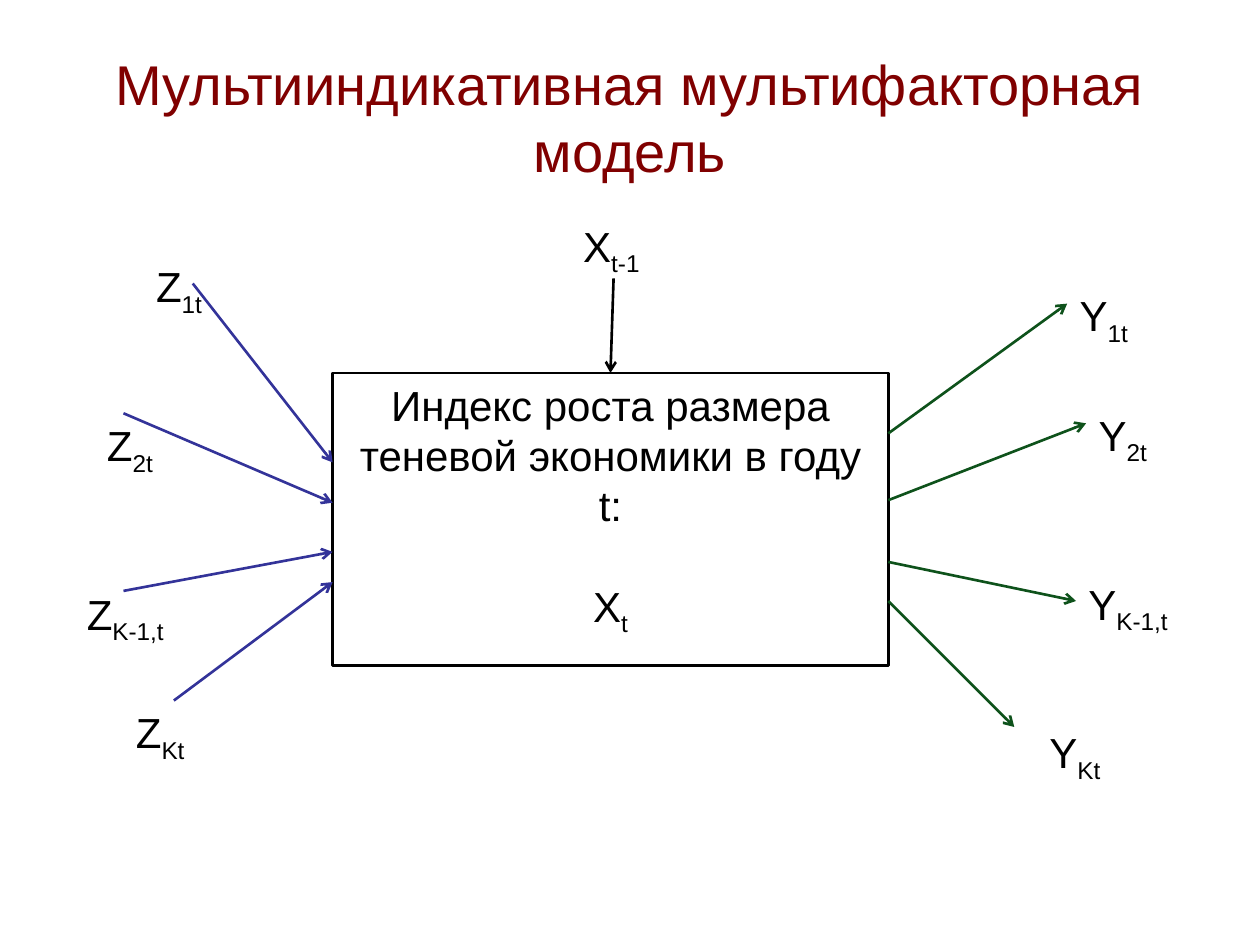
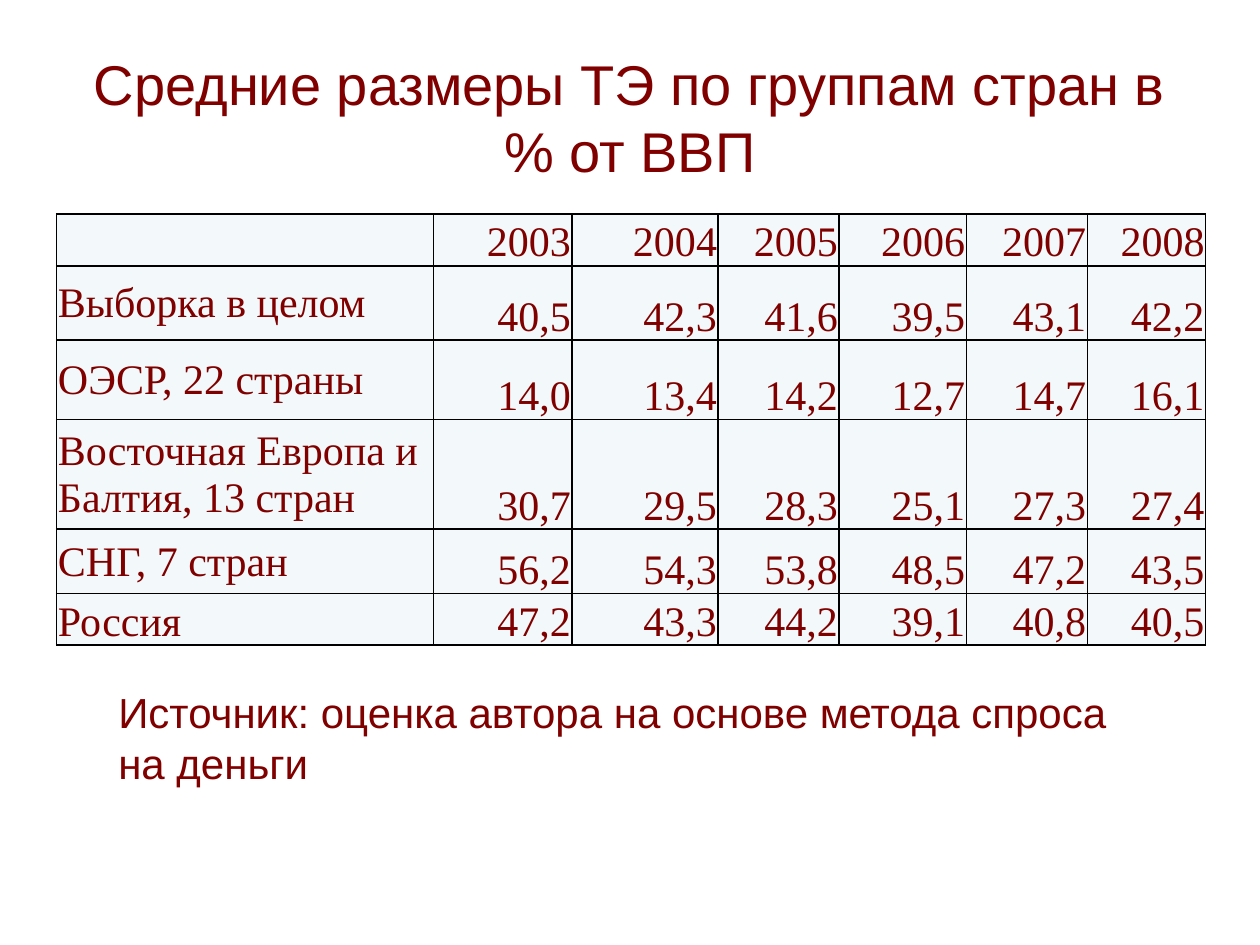
from lxml.etree import SubElement
from pptx import Presentation
from pptx.dml.color import RGBColor
from pptx.enum.shapes import MSO_CONNECTOR as CONN, MSO_SHAPE as SHAPE
from pptx.enum.text import MSO_ANCHOR as ANCHOR, MSO_AUTO_SIZE as AUTO, PP_ALIGN as ALIGN
from pptx.oxml.ns import qn
from pptx.util import Inches, Pt

COLORS = {"title": "800000", "text": "000000", "factor": "333399",
          "indicator": "0E521B", "cell": "F3F9FA"}
SANS, SERIF = "Arial", "Times New Roman"


def rgb(name):
    return RGBColor.from_string(COLORS[name])


def inches(*values):
    return [Inches(v) for v in values]


def set_attrs(obj, values):
    for name, value in values.items():
        setattr(obj, name, value)


class Deck:
    """Holds the presentation style and the current slide."""

    def __init__(self):
        self.prs = Presentation()
        set_attrs(self.prs, {"slide_width": Inches(10), "slide_height": Inches(7.5)})

    def add_runs(self, p, text, color="text", size=24, font=SANS, align=ALIGN.LEFT, sub=""):
        p.alignment = align
        for part in filter(None, (text, sub)):
            r = p.add_run()
            r.text = part
            set_attrs(r.font, {"size": Pt(size), "name": font})
            r.font.color.rgb = rgb(color)
        if sub:
            r.font._element.set("baseline", "-25000")

    def slide(self, title):
        self.s = self.prs.slides.add_slide(self.prs.slide_layouts[5])
        sp = self.s.shapes.title
        set_attrs(sp, dict(zip(("left", "top", "width", "height"), inches(0.5, 0.3, 9, 1.25))))
        tf = sp.text_frame
        set_attrs(tf, {"word_wrap": True, "auto_size": AUTO.NONE,
                       "vertical_anchor": ANCHOR.MIDDLE})
        self.add_runs(tf.paragraphs[0], title, "title", 32, align=ALIGN.CENTER)

    def text(self, box, text, color="text", sub="", wrap=False):
        tf = self.s.shapes.add_textbox(*inches(*box)).text_frame
        set_attrs(tf, {"word_wrap": wrap, "auto_size": AUTO.SHAPE_TO_FIT_TEXT})
        self.add_runs(tf.paragraphs[0], text, color, sub=sub)

    def index_box(self, box, caption, symbol, sub):
        sp = self.s.shapes.add_shape(SHAPE.RECTANGLE, *inches(*box))
        sp.shadow.inherit = False
        sp.fill.background()
        sp.line.color.rgb = rgb("text")
        sp.line.width = Pt(1.5)
        tf = sp.text_frame
        set_attrs(tf, {"word_wrap": True, "vertical_anchor": ANCHOR.TOP})
        self.add_runs(tf.paragraphs[0], caption, align=ALIGN.CENTER)
        p = tf.add_paragraph()
        p.space_before = Pt(28.5)
        self.add_runs(p, symbol, align=ALIGN.CENTER, sub=sub)
        return sp

    def arrow(self, start, end, color):
        c = self.s.shapes.add_connector(CONN.STRAIGHT, *inches(*start, *end))
        c.line.color.rgb = rgb(color)
        c.line.width = Pt(1.5)
        sp_pr = c._element.spPr
        SubElement(sp_pr.find(qn("a:ln")), qn("a:tailEnd"), type="arrow")
        SubElement(sp_pr, qn("a:effectLst"))
        return c

    def border(self, cell):
        tc_pr = cell._tc.get_or_add_tcPr()
        for side in ("lnL", "lnR", "lnT", "lnB"):
            ln = SubElement(tc_pr, qn(f"a:{side}"), w=str(Pt(1)))
            fill = SubElement(ln, qn("a:solidFill"))
            SubElement(fill, qn("a:srgbClr"), val=COLORS["text"])

    def table(self, box, rows, widths, heights):
        frame = self.s.shapes.add_table(len(rows), len(widths), *inches(*box))
        table = frame.table
        set_attrs(table, {"first_row": False, "horz_banding": False})
        for col, width in zip(table.columns, widths):
            col.width = Inches(width)
        for row, height in zip(table.rows, heights):
            row.height = Inches(height)
        edge = Inches(0.01)
        for i, values in enumerate(rows):
            for j, value in enumerate(values):
                cell = table.cell(i, j)
                is_label = j == 0
                middle = is_label and i < len(rows) - 1
                set_attrs(cell, {"margin_left": edge, "margin_right": edge,
                                 "margin_top": edge, "margin_bottom": 0,
                                 "vertical_anchor": ANCHOR.MIDDLE if middle else ANCHOR.BOTTOM})
                self.border(cell)
                cell.fill.solid()
                cell.fill.fore_color.rgb = rgb("cell")
                self.add_runs(cell.text_frame.paragraphs[0], value, "title", font=SERIF,
                              align=ALIGN.LEFT if is_label else ALIGN.RIGHT)


def model_slide(deck):
    deck.slide("Мультииндикативная мультифакторная модель")
    left, top, width, height = 2.64, 2.96, 4.41, 2.32
    right = left + width
    index = deck.index_box((left, top, width, height),
                           "Индекс роста размера теневой экономики в году t:", "X", "t")
    factors = [("1t", (1.14, 2.02, 0.6), (1.53, 2.25), 3.67),
               ("2t", (0.75, 3.28, 0.59), (0.98, 3.28), 3.99),
               ("K-1,t", (0.59, 4.62, 0.88), (0.98, 4.69), 4.38),
               ("Kt", (0.98, 5.56, 0.62), (1.38, 5.56), 4.62)]
    indicators = [("1t", (8.47, 2.25, 0.61), (8.47, 2.41), 3.44),
                  ("2t", (8.62, 3.2, 0.61), (8.62, 3.36), 3.97),
                  ("K-1,t", (8.54, 4.54, 0.9), (8.54, 4.77), 4.46),
                  ("Kt", (8.23, 5.72, 0.64), (8.05, 5.77), 4.77)]
    for sub, place, start, y in factors:
        deck.arrow(start, (left, y), "factor")
        deck.text((*place, 0.51), "Z", sub=sub)
    for sub, place, end, y in indicators:
        deck.arrow((right, y), end, "indicator")
        deck.text((*place, 0.51), "Y", sub=sub)
    deck.text((4.53, 1.7, 0.69, 0.51), "X", sub="t-1")
    deck.arrow((4.87, 2.21), (left + width / 2, top), "text").end_connect(index, 0)


def table_slide(deck):
    deck.slide("Средние размеры ТЭ по группам стран в % от ВВП")
    deck.text((0.84, 5.4, 8.35, 0.91),
              "Источник: оценка автора на основе метода спроса на деньги", "title", wrap=True)
    rows = [("", "2003", "2004", "2005", "2006", "2007", "2008"),
            ("Выборка в целом", "40,5", "42,3", "41,6", "39,5", "43,1", "42,2"),
            ("ОЭСР, 22 страны", "14,0", "13,4", "14,2", "12,7", "14,7", "16,1"),
            ("Восточная Европа и Балтия, 13 стран",
             "30,7", "29,5", "28,3", "25,1", "27,3", "27,4"),
            ("СНГ, 7 стран", "56,2", "54,3", "53,8", "48,5", "47,2", "43,5"),
            ("Россия", "47,2", "43,3", "44,2", "39,1", "40,8", "40,5")]
    deck.table((0.45, 1.7, 9.13, 3.41), rows,
               widths=(2.99, 1.1, 1.16, 0.96, 1.01, 0.96, 0.94),
               heights=(0.41, 0.59, 0.63, 0.87, 0.51, 0.41))


def main():
    deck = Deck()
    model_slide(deck)
    table_slide(deck)
    deck.prs.save("out.pptx")


if __name__ == "__main__":
    main()
